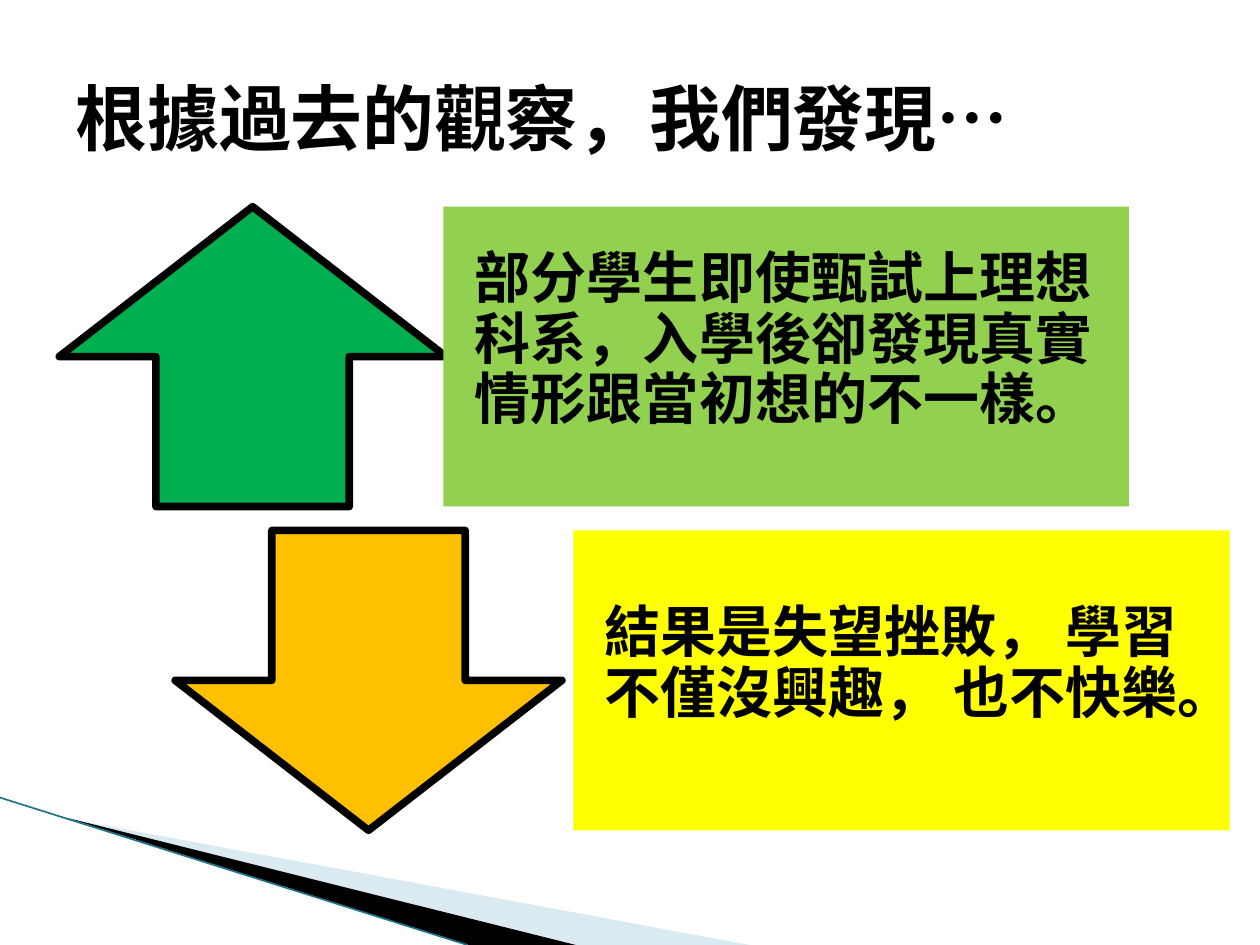
import pptx
import pptx.util
import pptx.dml.color
import pptx.enum.shapes
import pptx.enum.text
import pptx.oxml
import pptx.oxml.ns

Inches = pptx.util.Inches
SHAPE = pptx.enum.shapes.MSO_SHAPE
COLORS = {
    "ink": "000000",
    "wedge": "A0CBDC",
    "edge": "1F7388",
    "up": "00B050",
    "up_panel": "92D050",
    "down": "FFC000",
    "down_panel": "FFFF00",
}


def rgb(name):
    return pptx.dml.color.RGBColor.from_string(COLORS[name])


def write(frame, text, size=32, margins=(0.25, 0, 0.25, 0.25), line_spacing=0.9):
    frame.word_wrap = True
    frame.auto_size = pptx.enum.text.MSO_AUTO_SIZE.NONE
    frame.vertical_anchor = pptx.enum.text.MSO_ANCHOR.MIDDLE
    frame.margin_left, frame.margin_top, frame.margin_right, frame.margin_bottom = map(Inches, margins)
    paragraph = frame.paragraphs[0]
    paragraph.alignment = pptx.enum.text.PP_ALIGN.LEFT
    paragraph.line_spacing = line_spacing
    run = paragraph.add_run()
    run.text = text
    run.font.name = "Courier New"
    run.font.size = pptx.util.Pt(size)
    run.font.bold = True
    run.font.color.rgb = rgb("ink")


deck = pptx.Presentation()
deck.slide_width, deck.slide_height = Inches(10), Inches(7.5)
slide = deck.slides.add_slide(deck.slide_layouts[5])

wedges = [
    ("wedge", [(0.55, 6.5), (5.95, 7.5), (4.56, 7.5)]),
    ("ink", [(0.53, 6.49), (4.57, 7.5), (3.72, 7.5)]),
]
for color, corners in wedges:
    points = [(Inches(x), Inches(y)) for x, y in corners]
    builder = slide.shapes.build_freeform(*points[0], scale=1.0)
    builder.add_line_segments(points[1:], close=True)
    wedge = builder.convert_to_shape()
    wedge.shadow.inherit = False
    wedge.fill.solid()
    wedge.fill.fore_color.rgb = rgb(color)
    wedge.line.fill.background()
    if color == "wedge":
        tint = wedge.fill._xPr.find(".//" + pptx.oxml.ns.qn("a:srgbClr"))
        tint.append(pptx.oxml.parse_xml(f'<a:alpha {pptx.oxml.ns.nsdecls("a")} val="40000"/>'))

edge = slide.shapes.add_connector(
    pptx.enum.shapes.MSO_CONNECTOR.STRAIGHT, Inches(0), Inches(6.33), Inches(3.71), Inches(7.5)
)
edge.line.color.rgb = rgb("edge")
edge.line.width = pptx.util.Pt(0.95)
edge._element.spPr.append(pptx.oxml.parse_xml(f'<a:effectLst {pptx.oxml.ns.nsdecls("a")}/>'))

findings = [
    (SHAPE.UP_ARROW, "up", 0.47, 3.52, 5.44, 1.64,
     "部分學生即使甄試上理想科系，入學後卻發現真實情形跟當初想的不一樣。"),
    (SHAPE.DOWN_ARROW, "down", 1.39, 4.55, 5.21, 4.21,
     "結果是失望挫敗， 學習不僅沒興趣， 也不快樂。"),
]
for kind, color, arrow_left, panel_left, panel_width, top, text in findings:
    arrow = slide.shapes.add_shape(kind, Inches(arrow_left), Inches(top), Inches(3.07), Inches(2.38))
    arrow.line.color.rgb = rgb("ink")
    arrow.line.width = pptx.util.Pt(4.33)
    panel = slide.shapes.add_shape(
        SHAPE.RECTANGLE, Inches(panel_left), Inches(top), Inches(panel_width), Inches(2.38)
    )
    panel.line.fill.background()
    for part, fill in ((arrow, color), (panel, color + "_panel")):
        part.shadow.inherit = False
        part.fill.solid()
        part.fill.fore_color.rgb = rgb(fill)
    write(panel.text_frame, text)

title = slide.shapes.title
title.left, title.top, title.width, title.height = map(Inches, (0.5, 0.3, 9, 1.25))
write(title.text_frame, "根據過去的觀察，我們發現…", size=41, margins=(0.1, 0.05, 0.1, 0.05), line_spacing=1.0)

deck.save("out.pptx")
